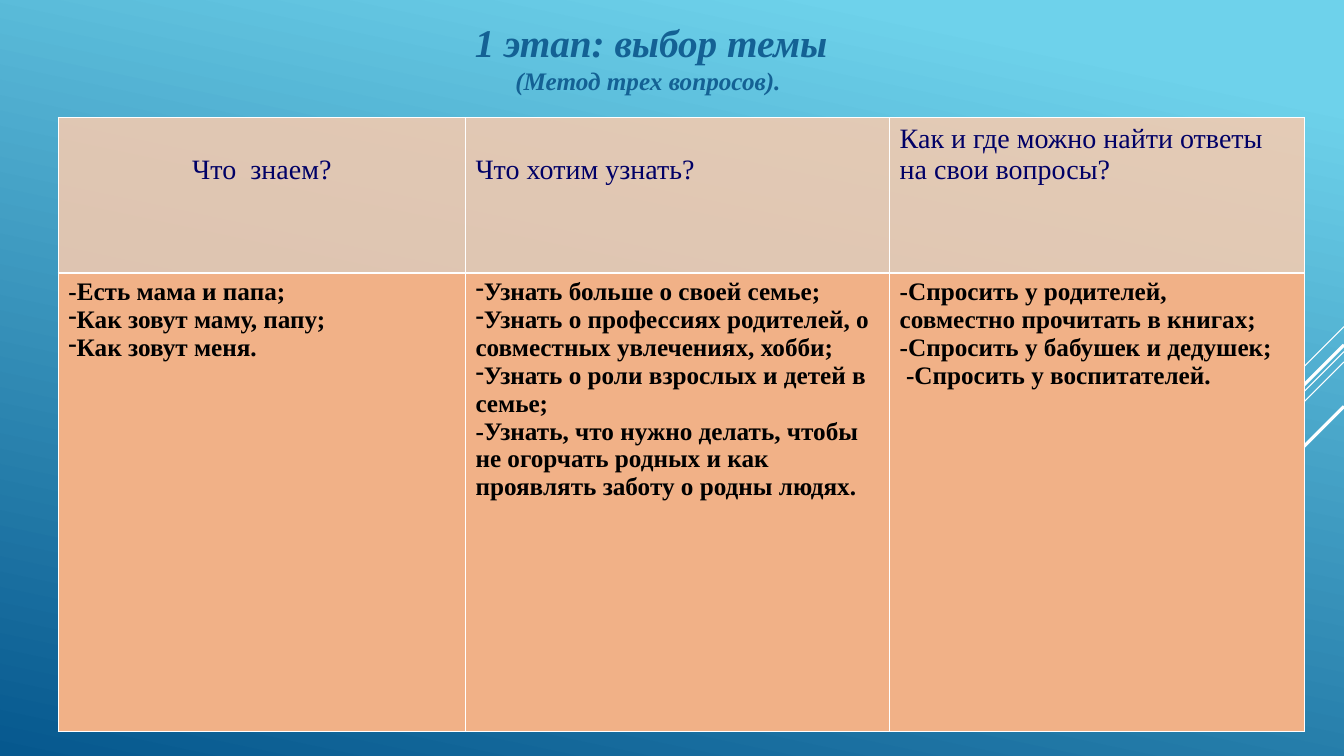
from lxml import etree
from pptx import Presentation
from pptx import util as u
from pptx.dml import color
from pptx.enum import shapes, text
from pptx.oxml import ns

FONT = "Times New Roman"
WHITE = "FFFFFF"
SLIDE_WIDTH, SLIDE_HEIGHT = 33.87, 19.05

HEADINGS = [
    # wording, alignment, top margin
    ("Что  знаем?", text.PP_ALIGN.CENTER, 0.92),
    ("Что хотим узнать?", text.PP_ALIGN.LEFT, 0.92),
    ("Как и где можно найти ответы на свои вопросы?", text.PP_ALIGN.LEFT, 0.13),
]
DASH = True
ANSWERS = [
    # wording, whether the dash is an automatic bullet
    [("-Есть мама и папа;", not DASH),
     ("Как зовут маму, папу;", DASH),
     ("Как зовут меня.", DASH)],
    [("Узнать больше о своей семье;", DASH),
     ("Узнать о профессиях родителей, о совместных увлечениях, хобби;", DASH),
     ("Узнать о роли взрослых и детей в семье;", DASH),
     ("-Узнать, что нужно делать, чтобы не огорчать родных и как "
      "проявлять заботу о родны людях.", not DASH)],
    [("-Спросить у родителей,  совместно прочитать в книгах;", not DASH),
     ("-Спросить у бабушек и дедушек;", not DASH),
     (" -Спросить у воспитателей.", not DASH)],
]


def rgb(hex_code):
    return color.RGBColor.from_string(hex_code)


def set_font(paragraph, size, hex_code, bold=False, italic=False):
    font = paragraph.font
    font.name, font.size = FONT, u.Pt(size)
    font.bold, font.italic = bold, italic
    font.color.rgb = rgb(hex_code)


def paint_background(slide):
    fill = slide.background.fill
    fill.gradient()
    fill.gradient_angle = 258
    stops = [(0.1, "6ED2EB"), (1, "06588E")]
    for stop, (position, hex_code) in zip(fill.gradient_stops, stops):
        stop.position = position
        stop.color.rgb = rgb(hex_code)


def draw_diagonals(slide, right):
    """Draw the 45-degree rays that run down and left from the right edge."""
    rays = [(8.23, 2.54, 0.75), (8.86, 8.28, 0.75), (9.12, 5.26, 0.75),
            (8.69, 4.85, 2.25), (10.24, 3.53, 2.25)]
    for top, reach, weight in rays:
        ray = slide.shapes.add_connector(
            shapes.MSO_CONNECTOR.STRAIGHT, u.Cm(right), u.Cm(top),
            u.Cm(right - reach), u.Cm(top + reach))
        ray.line.color.rgb = rgb(WHITE)
        ray.line.width = u.Pt(weight)
        etree.SubElement(ray._element.spPr, ns.qn("a:effectLst"))


def write_title(slide, left, top, width, height):
    title = slide.shapes.title
    title.left, title.top = u.Cm(left), u.Cm(top)
    title.width, title.height = u.Cm(width), u.Cm(height)
    frame = title.text_frame
    frame.word_wrap = False
    frame.auto_size = text.MSO_AUTO_SIZE.NONE
    frame.vertical_anchor = text.MSO_ANCHOR.TOP
    stage, method = frame.paragraphs[0], frame.add_paragraph()
    stage.text, method.text = "1 этап: выбор темы", "(Метод трех вопросов). "
    for paragraph, size in ((stage, 28), (method, 18)):
        paragraph.alignment = text.PP_ALIGN.CENTER
        set_font(paragraph, size, "146194", bold=True, italic=True)


def style_cell(cell, hex_code, opacity=100):
    """Give a cell white borders and a fill of the given opacity in percent."""
    properties = cell._tc.get_or_add_tcPr()
    for side in ("lnL", "lnR", "lnT", "lnB"):
        border = etree.SubElement(properties, ns.qn(f"a:{side}"), w=str(u.Pt(1)))
        solid = etree.SubElement(border, ns.qn("a:solidFill"))
        etree.SubElement(solid, ns.qn("a:srgbClr"), val=WHITE)
    cell.fill.solid()
    cell.fill.fore_color.rgb = rgb(hex_code)
    if opacity < 100:
        tint = properties.find(ns.qn("a:solidFill")).find(ns.qn("a:srgbClr"))
        etree.SubElement(tint, ns.qn("a:alpha"), val=str(opacity * 1000))


def add_dash(paragraph):
    properties = paragraph._p.get_or_add_pPr()
    properties.set("marL", "0")
    properties.set("indent", "0")
    dash = etree.Element(ns.qn("a:buChar"), char="-")
    properties.find(ns.qn("a:defRPr")).addprevious(dash)


def fill_heading(cell, wording, alignment, margin_top):
    style_cell(cell, "F6CBAF", opacity=87)
    cell.margin_top = u.Cm(margin_top)
    cell.text = wording
    heading = cell.text_frame.paragraphs[0]
    heading.alignment = alignment
    set_font(heading, 20, "000066")


def fill_answers(cell, answers):
    style_cell(cell, "F1B187")
    frame = cell.text_frame
    for index, (wording, dashed) in enumerate(answers):
        answer = frame.add_paragraph() if index else frame.paragraphs[0]
        answer.text = wording
        set_font(answer, 18, "000000", bold=True)
        if dashed:
            add_dash(answer)


def build_questions(slide, left, top, widths, heights):
    questions = slide.shapes.add_table(
        len(heights), len(widths), u.Cm(left), u.Cm(top),
        u.Cm(sum(widths)), u.Cm(sum(heights))).table
    for row, height in zip(questions.rows, heights):
        row.height = u.Cm(height)
    for index, width in enumerate(widths):
        questions.columns[index].width = u.Cm(width)
        fill_heading(questions.cell(0, index), *HEADINGS[index])
        fill_answers(questions.cell(1, index), ANSWERS[index])


def main():
    deck = Presentation()
    deck.slide_width, deck.slide_height = u.Cm(SLIDE_WIDTH), u.Cm(SLIDE_HEIGHT)
    slide = deck.slides.add_slide(deck.slide_layouts.get_by_name("Title Only"))
    paint_background(slide)
    draw_diagonals(slide, SLIDE_WIDTH)
    write_title(slide, 11.66, 0.33, 9.5, 2.24)
    build_questions(slide, 1.47, 2.97, (10.26, 10.69, 10.46), (3.91, 11.56))
    deck.save("out.pptx")


if __name__ == "__main__":
    main()
